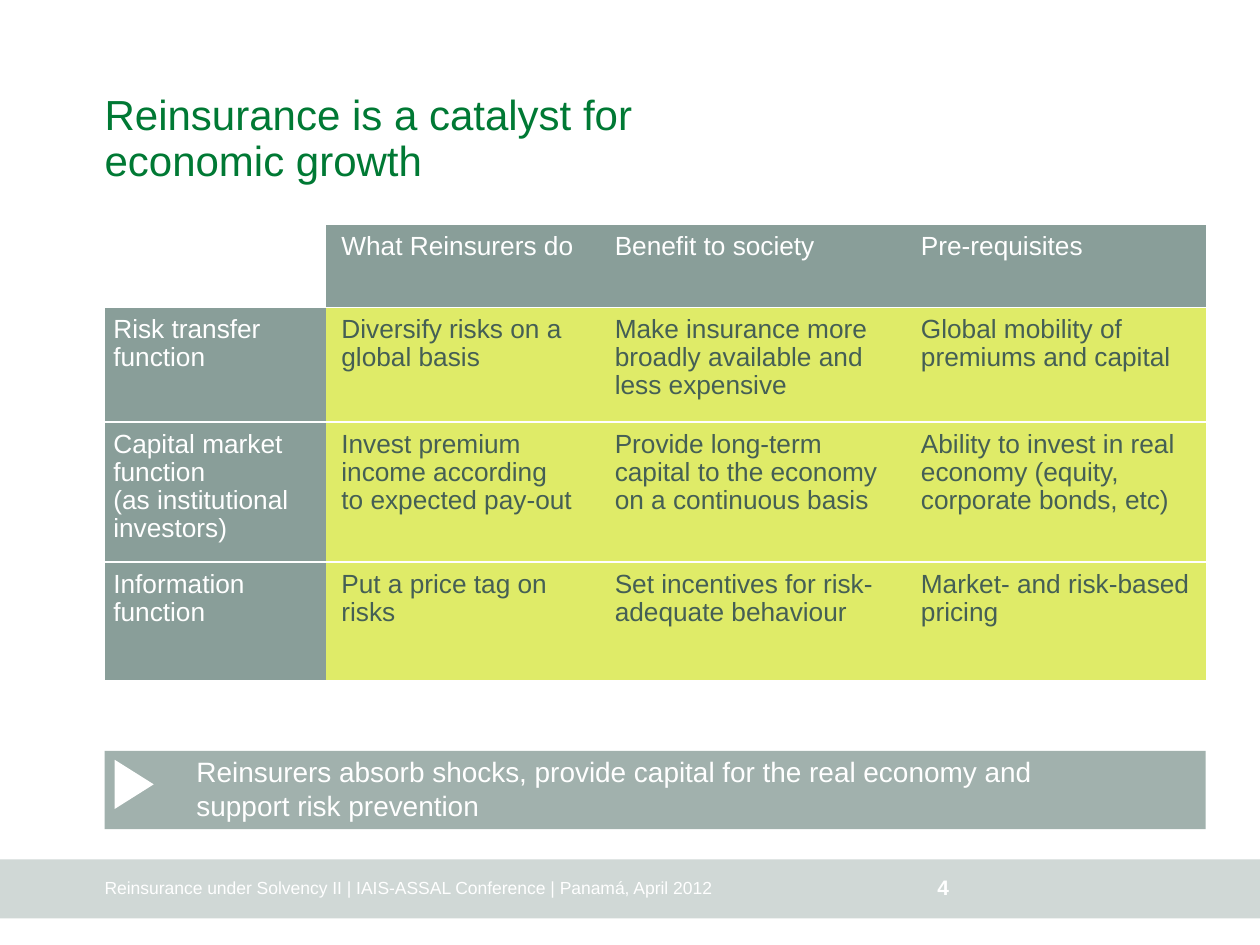
from lxml.etree import SubElement as Sub
from pptx import Presentation
from pptx.dml.color import RGBColor as RGB
from pptx.enum.shapes import MSO_SHAPE as Shape
from pptx.enum.text import MSO_ANCHOR as Anchor, PP_ALIGN as Align
from pptx.oxml.ns import qn
from pptx.util import Inches, Pt

HUES = {"white": "FFFFFF", "green": "007934", "head": "899E99", "lime": "DFEB68",
        "ink": "455F55", "bar": "A1B1AD", "foot": "D0D8D6"}
PLAIN = "{2D5ABB26-0587-4C30-8999-92F81FD0307C}"
COLS = [1.76, 2.17, 2.43, 2.38]
ROWS = [0.66, 0.91, 1.11, 0.94]
CELLS = [
    ["", "What Reinsurers do", "Benefit to society", "Pre-requisites"],
    ["Risk transfer function", "Diversify risks on a global basis",
     "Make insurance more broadly available and less expensive",
     "Global mobility of premiums and capital"],
    ["Capital market function\v(as institutional investors)",
     "Invest premium income according\vto expected pay-out",
     "Provide long-term capital to the economy on a continuous basis",
     "Ability to invest in real economy (equity, corporate bonds, etc)"],
    ["Information function", "Put a price tag on risks",
     "Set incentives for risk-adequate behaviour", "Market- and risk-based pricing"],
]


def paint(fill, hue):
    fill.solid()
    fill.fore_color.rgb = RGB.from_string(HUES[hue])


def apply(part, vals):
    for name, val in vals.items():
        setattr(part, name, val)


def write(frame, text, size, hue, bold=False, space=None):
    frame.text = text
    for para in frame.paragraphs:
        apply(para, {"alignment": Align.LEFT, "line_spacing": space})
        for run in para.runs:
            apply(run.font, {"name": "Arial", "size": Pt(size), "bold": bold})
            run.font.color.rgb = RGB.from_string(HUES[hue])


def inset(part, left, top, right, low):
    apply(part, {"margin_left": Inches(left), "margin_top": Inches(top),
                 "margin_right": Inches(right), "margin_bottom": Inches(low)})


def block(slide, kind, box, hue):
    shape = slide.shapes.add_shape(kind, *map(Inches, box))
    shape.shadow.inherit = False
    paint(shape.fill, hue)
    shape.line.fill.background()
    return shape


def label(slide, box, text, size, bold=False):
    frame = slide.shapes.add_textbox(*map(Inches, box)).text_frame
    inset(frame, 0, 0, 0, 0)
    apply(frame, {"word_wrap": False, "vertical_anchor": Anchor.BOTTOM})
    write(frame, text, size, "white", bold)


def footer(slide, x, y, w, h):
    block(slide, Shape.RECTANGLE, (x, y, w, h), "foot")
    label(slide, (x + 0.83, y + 0.16, 6.46, 0.15),
          "Reinsurance under Solvency II | IAIS-ASSAL Conference | Panamá, April 2012", 10)
    label(slide, (x + 7.44, y + 0.12, 0.2, 0.2), "4", 12, True)


def heading(slide, x, y, w, h):
    title = slide.shapes.title
    apply(title, {"left": Inches(x), "top": Inches(y),
                  "width": Inches(w), "height": Inches(h)})
    frame = title.text_frame
    inset(frame, 0, 0, 0, 0)
    apply(frame, {"word_wrap": True, "vertical_anchor": Anchor.BOTTOM})
    write(frame, "Reinsurance is a catalyst for \veconomic growth", 24, "green", space=0.9)


def rule(cell):
    props = cell._tc.get_or_add_tcPr()
    for spot, tag in enumerate(("a:lnT", "a:lnB")):
        line = Sub(props, qn(tag), w=str(Pt(1)))
        Sub(Sub(line, qn("a:solidFill")), qn("a:srgbClr"), val=HUES["white"])
        props.insert(spot, line)


def grid(slide, x, y, w, h):
    table = slide.shapes.add_table(len(ROWS), len(COLS), *map(Inches, (x, y, w, h))).table
    apply(table, {"first_row": False, "horz_banding": False})
    table._tbl.tblPr.find(qn("a:tableStyleId")).text = PLAIN
    for col, wide in zip(table.columns, COLS):
        col.width = Inches(wide)
    for row, tall in zip(table.rows, ROWS):
        row.height = Inches(tall)
    for r, texts in enumerate(CELLS):
        for c, text in enumerate(texts):
            cell = table.cell(r, c)
            side = 0.12 if c else 0.07
            inset(cell, side, 0.07, side, 0.07)
            if text:
                body = r > 0 and c > 0
                paint(cell.fill, "lime" if body else "head")
                write(cell.text_frame, text, 15, "ink" if body else "white", space=0.96)
            else:
                cell.fill.background()
            rule(cell)


def banner(slide, x, y, w, h):
    frame = block(slide, Shape.RECTANGLE, (x, y, w, h), "bar").text_frame
    inset(frame, 0.73, 0.03, 0.06, 0.06)
    apply(frame, {"word_wrap": True, "vertical_anchor": Anchor.MIDDLE})
    write(frame, "Reinsurers absorb shocks, provide capital for the real economy and \v"
          "support risk prevention", 16, "white")
    arrow = block(slide, Shape.ISOSCELES_TRIANGLE, (x + 0.04, y + 0.11, 0.39, 0.31), "white")
    arrow.rotation = 90


def main():
    deck = Presentation()
    apply(deck, {"slide_width": Inches(10), "slide_height": Inches(7.5)})
    slide = deck.slides.add_slide(deck.slide_layouts[5])
    footer(slide, 0, 6.82, 10, 0.47)
    heading(slide, 0.83, 0.52, 6.38, 0.95)
    grid(slide, 0.83, 1.78, sum(COLS), sum(ROWS))
    banner(slide, 0.83, 5.96, 8.74, 0.62)
    deck.save("out.pptx")


if __name__ == "__main__":
    main()
